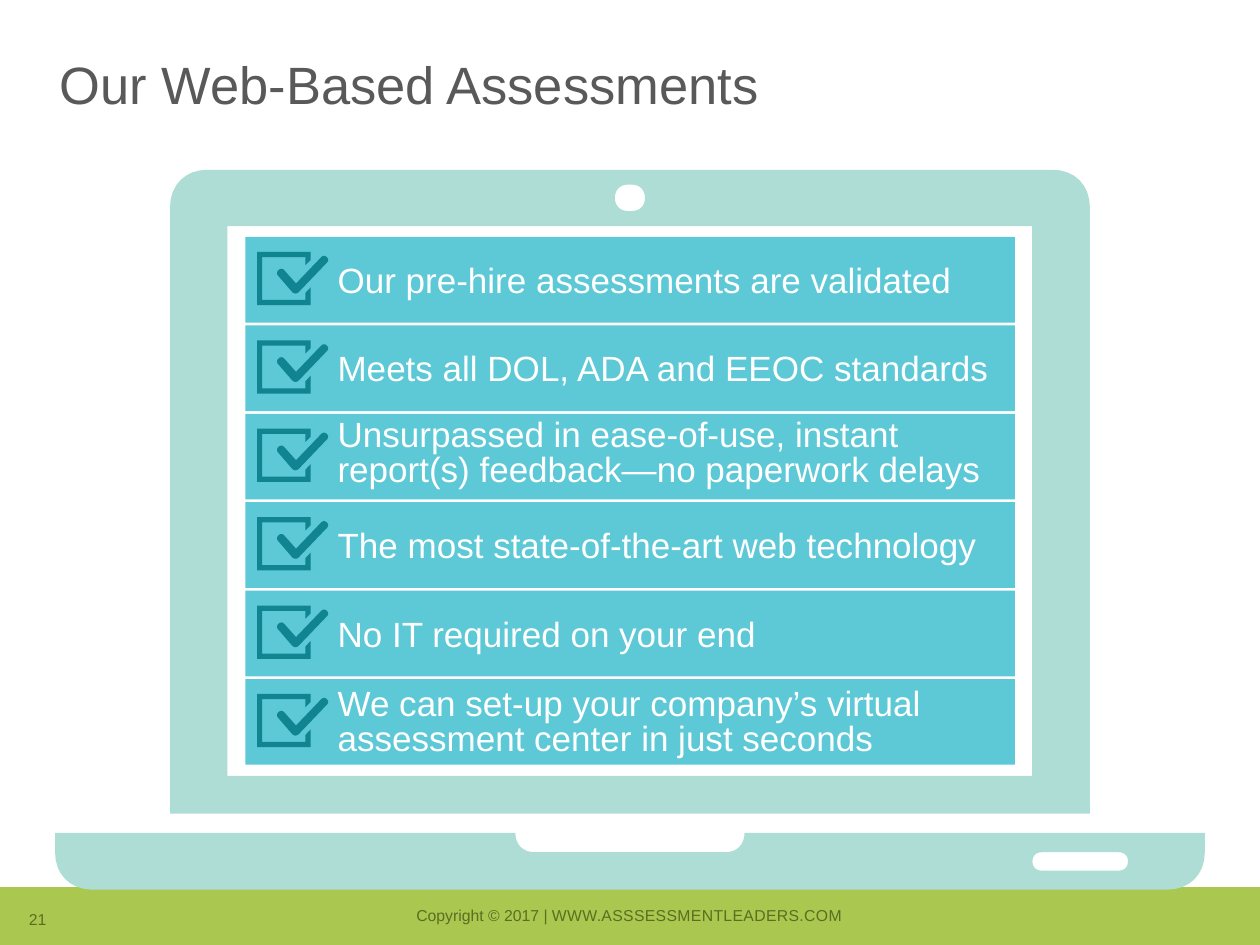
from dataclasses import dataclass

from pptx import Presentation
from pptx.dml.color import RGBColor
from pptx.enum.shapes import MSO_SHAPE
from pptx.enum.text import MSO_ANCHOR, MSO_AUTO_SIZE, PP_ALIGN
from pptx.util import Pt

RECTANGLE = MSO_SHAPE.RECTANGLE
TOP, BOTTOM = MSO_ANCHOR.TOP, MSO_ANCHOR.BOTTOM
LEFT, CENTER = PP_ALIGN.LEFT, PP_ALIGN.CENTER
FIT_SHAPE, FIXED = MSO_AUTO_SIZE.SHAPE_TO_FIT_TEXT, MSO_AUTO_SIZE.NONE


@dataclass(frozen=True)
class Theme:
    font: str = "Arial"
    footer_band: str = "AAC750"
    footer_text: str = "5B6E21"
    title_text: str = "595959"
    row: str = "5DC8D6"
    row_text: str = "FFFFFF"
    laptop: str = "ADDDD4"
    check: str = "118491"
    title_size: int = 30
    row_size: int = 20
    footer_size: int = 9


def rounded(corners, steps=8):
    """Return an outline's points from (x, y, radius) corners."""
    points = []
    for index, (x, y, radius) in enumerate(corners):
        if not radius:
            points.append((x, y))
            continue
        ends = []
        for neighbour in (corners[index - 1], corners[(index + 1) % len(corners)]):
            dx, dy = neighbour[0] - x, neighbour[1] - y
            length = (dx * dx + dy * dy) ** 0.5
            ends.append((dx / length * radius, dy / length * radius))
        (start_x, start_y), (end_x, end_y) = ends
        for step in range(steps + 1):
            t = step / steps
            # Cubic curve with its handles 0.6 of the way to the corner
            start = (1 - t) ** 3 + 1.2 * t * (1 - t) ** 2
            end = t ** 3 + 1.2 * t ** 2 * (1 - t)
            points.append((x + start * start_x + end * end_x,
                           y + start * start_y + end * end_y))
    return points


def box_corners(left, top, right, bottom, top_radius=0, bottom_radius=0):
    return [(left, top, top_radius), (right, top, top_radius),
            (right, bottom, bottom_radius), (left, bottom, bottom_radius)]


class SlideBuilder:
    def __init__(self, slide, theme):
        self.slide = slide
        self.theme = theme

    def paint(self, shape, color):
        shape.shadow.inherit = False
        shape.fill.solid()
        shape.fill.fore_color.rgb = RGBColor.from_string(color)
        shape.line.fill.background()

    def rectangle(self, left, top, width, height, color):
        shape = self.slide.shapes.add_shape(
            RECTANGLE, Pt(left), Pt(top), Pt(width), Pt(height))
        self.paint(shape, color)

    def outline(self, contours, color, left=0, top=0):
        """Draw closed contours as one shape; inner contours become holes."""
        paths = [[(Pt(left + x), Pt(top + y)) for x, y in rounded(contour)]
                 for contour in contours]
        builder = self.slide.shapes.build_freeform(*paths[0][0])
        for index, path in enumerate(paths):
            if index:
                builder.move_to(*path[0])
            builder.add_line_segments(path[1:], close=True)
        self.paint(builder.convert_to_shape(), color)

    def text(self, content, left, top, width, height, *, size, color,
             align=LEFT, anchor=TOP, wrap=True, fit=FIT_SHAPE,
             line_spacing=None, spaced_tail=""):
        box = self.slide.shapes.add_textbox(
            Pt(left), Pt(top), Pt(width), Pt(height))
        frame = box.text_frame
        frame.word_wrap = wrap
        frame.auto_size = fit
        frame.vertical_anchor = anchor
        paragraph = frame.paragraphs[0]
        paragraph.text = content
        paragraph.alignment = align
        if line_spacing:
            paragraph.line_spacing = line_spacing
        if spaced_tail:
            run = paragraph.add_run()
            run.text = spaced_tail
            run._r.get_or_add_rPr().set("spc", "20")
        for run in paragraph.runs:
            run.font.name = self.theme.font
            run.font.size = Pt(size)
            run.font.color.rgb = RGBColor.from_string(color)


ROW_LEFT, ROW_TOP, ROW_WIDTH, ROW_HEIGHT, ROW_PITCH = 140.2, 135.4, 439.8, 49, 50.52
# Each row: wording, distance of its text box from the row's top, number of lines
ROWS = [
    ("Our pre-hire assessments are validated", 8.7, 1),
    ("Meets all DOL, ADA and EEOC standards", 8.7, 1),
    ("Unsurpassed in ease-of-use, instant \vreport(s) feedback—no paperwork delays", 0, 2),
    ("The most state-of-the-art web technology", 8.7, 1),
    ("No IT required on your end", 8.7, 1),
    ("We can set-up your company’s virtual assessment center in just seconds", 2, 2),
]
LAPTOP = [
    [(31.5, 476, 0), (294.5, 476, 0), (294.5, 487, 11), (425.5, 487, 11),
     (425.5, 476, 0), (688.5, 476, 0), (688.5, 508.4, 21.6), (31.5, 508.4, 21.6)],
    box_corners(590, 487, 644.6, 497.5, 5.2, 5.2),
    box_corners(97.2, 97, 622.8, 465, top_radius=21.6),
    box_corners(130, 129.2, 589.8, 443.4),
    box_corners(351.4, 105.5, 368.6, 120.6, 7.5, 7.5),
]
CHECK_BOX = [(x, y, 0) for x, y in (
    (0, 0), (30.6, 0), (30.6, 4.6), (27.6, 7.6), (27.6, 3), (3, 3), (3, 27.4),
    (27.6, 27.4), (27.6, 23.5), (30.6, 20.3), (30.6, 30.4), (0, 30.4))]
TICK = [(14.1, 8.8, 2.2), (10.6, 11.9, 2.2), (21.9, 25, 3),
        (41.5, 4.5, 2.2), (38.2, 1.4, 2.2), (22.3, 18, 0)]


def main():
    presentation = Presentation()
    presentation.slide_width, presentation.slide_height = Pt(720), Pt(540)
    theme = Theme()
    builder = SlideBuilder(
        presentation.slides.add_slide(presentation.slide_layouts[6]), theme)

    builder.rectangle(0, 507, 720, 33, theme.footer_band)
    footer = {"size": theme.footer_size, "color": theme.footer_text,
              "anchor": BOTTOM, "wrap": False}
    builder.text("Copyright © 2017 | ", 228, 514, 262.8, 18.2, align=CENTER,
                 spaced_tail="WWW.ASSSESSMENTLEADERS.COM", **footer)
    builder.text("21", 9.4, 515.8, 26, 18.2, **footer)
    builder.text("Our Web-Based Assessments", 27, 30.4, 666, 59.8, fit=FIXED,
                 size=theme.title_size, color=theme.title_text, line_spacing=0.9)

    row_tops = [ROW_TOP + index * ROW_PITCH for index in range(len(ROWS))]
    for top in row_tops:
        builder.rectangle(ROW_LEFT, top, ROW_WIDTH, ROW_HEIGHT, theme.row)
    builder.outline(LAPTOP, theme.laptop)
    for top, (wording, offset, lines) in zip(row_tops, ROWS):
        builder.text(wording, 185.8, top + offset, 433.4, 31.5 if lines == 1 else 47.5,
                     size=theme.row_size, color=theme.row_text,
                     line_spacing=Pt(20) if lines > 1 else None)
        builder.outline([CHECK_BOX, TICK], theme.check, 146.9, top + 8.6)

    presentation.save("out.pptx")


if __name__ == "__main__":
    main()
